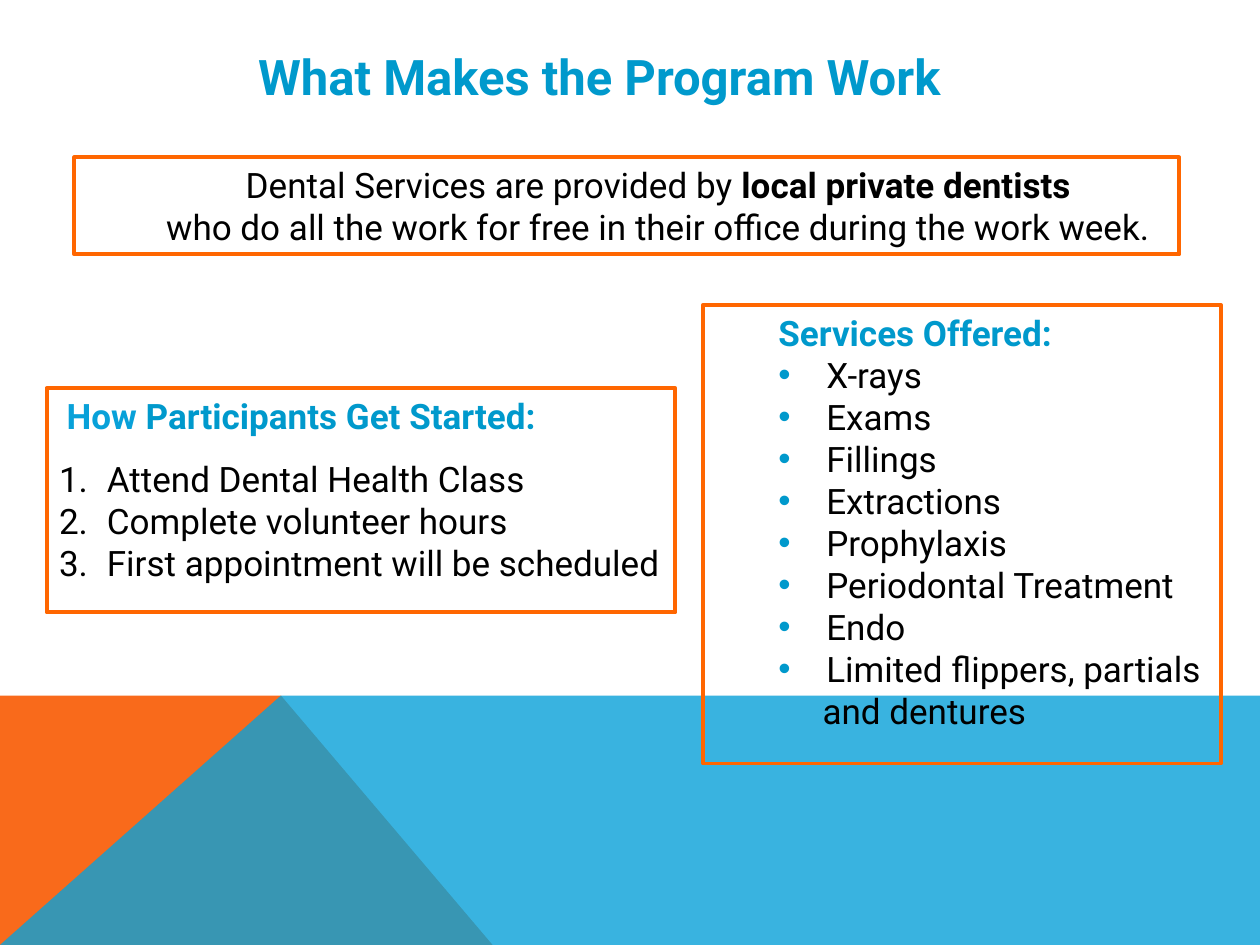
from lxml import etree
from pptx import Presentation
from pptx.dml.color import RGBColor
from pptx.enum.shapes import MSO_SHAPE
from pptx.enum.text import MSO_ANCHOR, PP_ALIGN
from pptx.oxml.ns import qn
from pptx.util import Inches, Pt

RECTANGLE = MSO_SHAPE.RECTANGLE
TOP = MSO_ANCHOR.TOP
LEFT, CENTER = PP_ALIGN.LEFT, PP_ALIGN.CENTER

WIDTH, HEIGHT = 10, 7.5
FONT = "Roboto"
BLUE, SKY, ORANGE, BLACK = "0099CC", "08A1D9", "FF6600", "000000"
HORIZON, PEAK = 5.52, 2.23
HANG = 0.38

BANDS = [
    ([(0, HEIGHT), (0, HORIZON), (PEAK, HORIZON), (3.91, HEIGHT)], "F96A1B", 100),
    ([(0, HEIGHT), (PEAK, HORIZON), (WIDTH, HORIZON), (WIDTH, HEIGHT)], SKY, 80),
]

STEPS = ["Attend Dental Health Class", "Complete volunteer hours",
         "First appointment will be scheduled"]
SERVICES = ["X-rays", "Exams", "Fillings", "Extractions", "Prophylaxis",
            "Periodontal Treatment", "Endo", "Limited flippers, partials"]


def line(*spans, **options):
    return {"spans": spans, **options}


def heading(text, indent):
    return line((text, BLUE, True), indent=indent)


STARTED = [line(("How ", SKY, True), ("Participants Get Started:", BLUE, True), indent=0.06)]
STARTED += [line((step, BLACK, False), indent=HANG, mark="number", before=0 if number else 12)
            for number, step in enumerate(STEPS)]
OFFERED = [heading("Services Offered:", 0.5)]
OFFERED += [line((service, BLACK, False), indent=0.5 + HANG, mark="bullet") for service in SERVICES]
OFFERED += [line(("and dentures", BLACK, False), indent=0.85)]
PROVIDED = [
    line(("Dental Services are provided by ", BLACK, False),
         ("local private dentists", BLACK, True), indent=0.5, align=CENTER),
    line(("who do all the work for free in their office during the work week.", BLACK, False),
         indent=0.5, align=CENTER),
]

BOXES = [
    ((0.37, 3.08, 4.99, 1.78), STARTED, 20, True, 0),
    ((5.58, 2.42, 4.11, 3.64), OFFERED, 20, True, 0),
    ((1.95, 0.32, 6.04, 0.57), [heading("What Makes the Program Work", 0)], 28, False, 0),
    ((0.59, 1.25, 8.77, 0.77), PROVIDED, 20, True, 0.1),
]


def color(value):
    return RGBColor.from_string(value)


def apply(target, values):
    for name, value in values.items():
        setattr(target, name, value)


def add_band(page, points, fill, opacity):
    builder = page.shapes.build_freeform(*map(Inches, points[0]))
    builder.add_line_segments([tuple(map(Inches, point)) for point in points[1:]], close=True)
    band = builder.convert_to_shape()
    band.shadow.inherit = False
    band.fill.solid()
    band.fill.fore_color.rgb = color(fill)
    band.line.fill.background()
    if opacity < 100:
        tint = band.fill._xPr.find(".//" + qn("a:srgbClr"))
        etree.SubElement(tint, qn("a:alpha"), val=str(opacity * 1000))


def format_para(para, indent, mark=None, before=0, align=LEFT):
    apply(para, {"alignment": align, "space_before": Pt(before)})
    props = para._p.get_or_add_pPr()
    props.set("marL", str(Inches(indent)))
    props.set("indent", str(Inches(-HANG if mark else 0)))
    if mark == "number":
        etree.SubElement(props, qn("a:buFont"), typeface="+mj-lt")
        etree.SubElement(props, qn("a:buAutoNum"), type="arabicPeriod")
    elif mark == "bullet":
        tint = etree.SubElement(props, qn("a:buClr"))
        etree.SubElement(tint, qn("a:srgbClr"), val=BLUE)
        etree.SubElement(props, qn("a:buFont"), typeface="Arial")
        etree.SubElement(props, qn("a:buChar"), char="•")


def add_box(page, place, lines, size, framed, right):
    place = [Inches(length) for length in place]
    if framed:
        box = page.shapes.add_shape(RECTANGLE, *place)
        box.shadow.inherit = False
        box.fill.background()
        box.line.color.rgb = color(ORANGE)
        box.line.width = Pt(2.25)
    else:
        box = page.shapes.add_textbox(*place)
    frame = box.text_frame
    apply(frame, {"word_wrap": True, "vertical_anchor": TOP, "margin_right": Inches(right)})
    for number, entry in enumerate(lines):
        para = frame.add_paragraph() if number else frame.paragraphs[0]
        format_para(para, **{key: entry[key] for key in entry if key != "spans"})
        for text, tint, bold in entry["spans"]:
            span = para.add_run()
            span.text = text
            apply(span.font, {"name": FONT, "size": Pt(size), "bold": bold})
            span.font.color.rgb = color(tint)


def main():
    deck = Presentation()
    apply(deck, {"slide_width": Inches(WIDTH), "slide_height": Inches(HEIGHT)})
    page = deck.slides.add_slide(deck.slide_layouts[6])
    for band in BANDS:
        add_band(page, *band)
    for box in BOXES:
        add_box(page, *box)
    deck.save("out.pptx")


if __name__ == "__main__":
    main()
